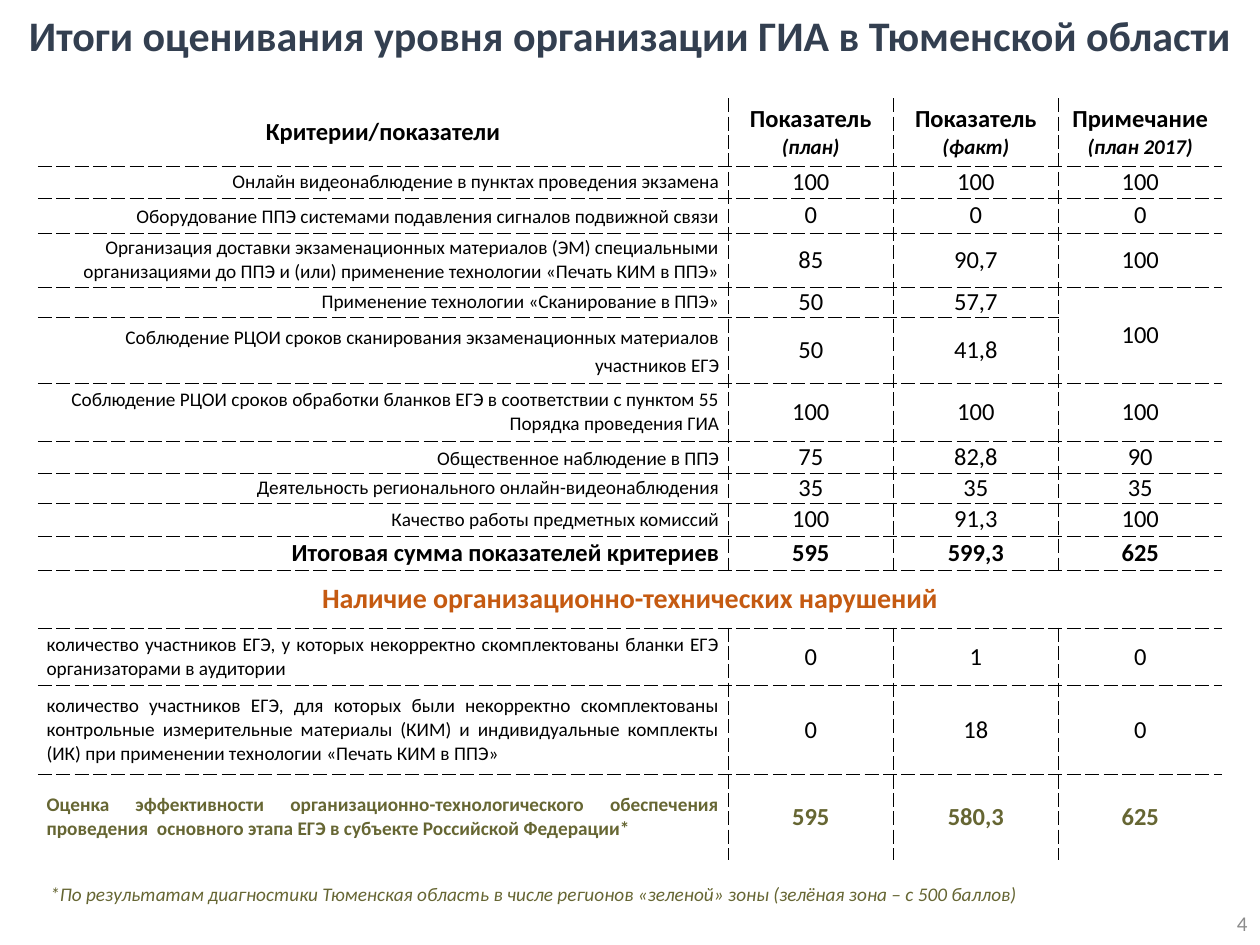
from lxml import etree
from pptx import Presentation
from pptx.dml.color import RGBColor
from pptx.enum import text as t
from pptx.oxml import ns
from pptx.util import Inches, Pt

BLACK = RGBColor(0x00, 0x00, 0x00)
SLATE = RGBColor(0x33, 0x3F, 0x50)
GRAY = RGBColor(0x8C, 0x8C, 0x8C)
ORANGE = RGBColor(0xC5, 0x5A, 0x11)
OLIVE = RGBColor(0x66, 0x66, 0x33)

LEFT, CENTER = t.PP_ALIGN.LEFT, t.PP_ALIGN.CENTER
RIGHT, JUSTIFY = t.PP_ALIGN.RIGHT, t.PP_ALIGN.JUSTIFY
GROW = t.MSO_AUTO_SIZE.SHAPE_TO_FIT_TEXT

COLUMN_WIDTHS = [5.48, 1.31, 1.31, 1.3]
ROW_HEIGHTS = [0.54, 0.25, 0.28, 0.43, 0.24, 0.52, 0.46, 0.26,
               0.23, 0.26, 0.27, 0.46, 0.46, 0.7, 0.68]
SECTION_ROW = 11
SHARED_ROWS = (4, 5)

HEADING = {"size": Pt(14), "bold": True}
SUBHEADING = {"size": Pt(12), "bold": True, "italic": True}
LABEL = {"size": Pt(11)}
VALUE = {"size": Pt(14)}
TOTAL = {"size": Pt(14), "bold": True}
SECTION = {"size": Pt(16), "bold": True, "color": ORANGE}
RATING_LABEL = {"size": Pt(11), "bold": True, "color": OLIVE}
RATING_VALUE = {"size": Pt(14), "bold": True, "color": OLIVE}

# Each header is a list of paragraphs, each paragraph a list of runs
HEADERS = [
    [[("Критерии/показатели", HEADING)]],
    [[("Показатель", HEADING)], [("(план)", SUBHEADING)]],
    [[("Показатель ", HEADING), ("(факт)", SUBHEADING)]],
    [[("Примечание ", HEADING), ("(план 2017)", SUBHEADING)]],
]

# Label, values, line spacing of the label
CRITERIA = [
    ("Онлайн видеонаблюдение в пунктах проведения экзамена",
     ["100", "100", "100"], 1.0),
    ("Оборудование ППЭ системами подавления сигналов подвижной связи",
     ["0", "0", "0"], 1.15),
    ("Организация доставки экзаменационных материалов (ЭМ) специальными "
     "организациями до ППЭ и (или) применение технологии «Печать КИМ в ППЭ»",
     ["85", "90,7", "100"], 1.0),
    ("Применение технологии «Сканирование в ППЭ»",
     ["50", "57,7", "100"], 1.0),
    ("Соблюдение РЦОИ сроков сканирования экзаменационных материалов "
     "участников ЕГЭ", ["50", "41,8"], 1.15),
    ("Соблюдение РЦОИ сроков обработки бланков ЕГЭ в соответствии с пунктом 55 "
     "Порядка проведения ГИА", ["100", "100", "100"], 1.0),
    ("Общественное наблюдение в ППЭ", ["75", "82,8", "90"], 1.15),
    ("Деятельность регионального онлайн-видеонаблюдения",
     ["35", "35", "35"], 1.0),
    ("Качество работы предметных комиссий", ["100", "91,3", "100"], 1.0),
]
SUM_ROW = ("Итоговая сумма показателей критериев", ["595", "599,3", "625"])
SECTION_TITLE = "Наличие организационно-технических нарушений"
VIOLATIONS = [
    ("количество участников ЕГЭ, у которых некорректно скомплектованы бланки "
     "ЕГЭ организаторами в аудитории", ["0", "1", "0"]),
    ("количество участников ЕГЭ, для которых были некорректно скомплектованы "
     "контрольные измерительные материалы (КИМ) и индивидуальные комплекты "
     "(ИК) при применении технологии «Печать КИМ в ППЭ»", ["0", "18", "0"]),
]
RATING_ROW = (
    "Оценка эффективности организационно-технологического обеспечения "
    "проведения  основного этапа ЕГЭ в субъекте Российской Федерации*",
    ["595", "580,3", "625"])


def write(frame, paragraphs, alignment, line_spacing=1.0):
    """Fill a text frame from paragraphs made of (text, format) runs."""
    for index, runs in enumerate(paragraphs):
        paragraph = frame.add_paragraph() if index else frame.paragraphs[0]
        paragraph.alignment = alignment
        paragraph.line_spacing = line_spacing
        for content, style in runs:
            run = paragraph.add_run()
            run.text = content
            font = {"name": "Calibri", "bold": False, "italic": False, **style}
            run.font.color.rgb = font.pop("color", BLACK)
            for name, value in font.items():
                setattr(run.font, name, value)


def add_text(slide, box, content, style, alignment, **frame_format):
    shape = slide.shapes.add_textbox(*map(Inches, box))
    shape.text_frame.word_wrap = True
    for name, value in frame_format.items():
        setattr(shape.text_frame, name, value)
    write(shape.text_frame, [[(content, style)]], alignment)


def add_title(slide, content):
    title = slide.shapes.title
    title.left, title.top, title.width, title.height = map(
        Inches, (0, 0, 10, 0.53))
    frame = title.text_frame
    frame.vertical_anchor = t.MSO_ANCHOR.TOP
    frame.auto_size = GROW
    write(frame, [[(content, {"size": Pt(24), "bold": True, "color": SLATE})]],
          CENTER, 1.07)


def set_border(cell, side, visible):
    line = etree.SubElement(cell._tc.get_or_add_tcPr(), ns.qn("a:ln" + side))
    if visible:
        line.set("w", str(Pt(0.25)))
        fill = etree.SubElement(line, ns.qn("a:solidFill"))
        etree.SubElement(fill, ns.qn("a:srgbClr"), val=str(BLACK))
        etree.SubElement(line, ns.qn("a:prstDash"), val="sysDash")
    else:
        line.set("w", "0")
        etree.SubElement(line, ns.qn("a:noFill"))


def format_cell(cell, row, column):
    """Draw dashed lines between cells only, none around the table."""
    last_row, last_column = len(ROW_HEIGHTS) - 1, len(COLUMN_WIDTHS) - 1
    in_section = row == SECTION_ROW
    under_shared = row == SHARED_ROWS[1] and column == last_column
    set_border(cell, "L", column > 0 and not in_section)
    set_border(cell, "R", column < last_column and not in_section)
    set_border(cell, "T", row > 0 and not under_shared)
    set_border(cell, "B", row < last_row)
    cell.fill.background()
    cell.vertical_anchor = t.MSO_ANCHOR.MIDDLE
    cell.margin_left = cell.margin_right = Inches(0.07)
    cell.margin_top = cell.margin_bottom = 0


def fill_row(table, row, label, values, label_style, value_style, alignment,
             line_spacing=1.0):
    write(table.cell(row, 0).text_frame, [[(label, label_style)]], alignment,
          line_spacing)
    for column, value in enumerate(values, 1):
        write(table.cell(row, column).text_frame, [[(value, value_style)]],
              CENTER)


def add_results_table(slide):
    table = slide.shapes.add_table(
        len(ROW_HEIGHTS), len(COLUMN_WIDTHS), Inches(0.3), Inches(0.78),
        Inches(sum(COLUMN_WIDTHS)), Inches(sum(ROW_HEIGHTS))).table
    table.first_row = table.horz_banding = False
    for column, width in zip(table.columns, COLUMN_WIDTHS):
        column.width = Inches(width)
    for index, height in enumerate(ROW_HEIGHTS):
        table.rows[index].height = Inches(height)
        for column in range(len(COLUMN_WIDTHS)):
            format_cell(table.cell(index, column), index, column)
    table.cell(SHARED_ROWS[0], 3).merge(table.cell(SHARED_ROWS[1], 3))
    table.cell(SECTION_ROW, 0).merge(table.cell(SECTION_ROW, 3))

    for column, paragraphs in enumerate(HEADERS):
        write(table.cell(0, column).text_frame, paragraphs, CENTER)
    for row, (label, values, spacing) in enumerate(CRITERIA, 1):
        fill_row(table, row, label, values, LABEL, VALUE, RIGHT, spacing)
    fill_row(table, SECTION_ROW - 1, *SUM_ROW, TOTAL, TOTAL, RIGHT)
    fill_row(table, SECTION_ROW, SECTION_TITLE, [], SECTION, VALUE, CENTER)
    for row, (label, values) in enumerate(VIOLATIONS, SECTION_ROW + 1):
        fill_row(table, row, label, values, LABEL, VALUE, JUSTIFY)
    fill_row(table, len(ROW_HEIGHTS) - 1, *RATING_ROW, RATING_LABEL,
             RATING_VALUE, JUSTIFY)


def main():
    presentation = Presentation()
    presentation.slide_width, presentation.slide_height = Inches(10), Inches(7.5)
    slide = presentation.slides.add_slide(presentation.slide_layouts[5])
    add_title(slide, "Итоги оценивания уровня организации ГИА в Тюменской области")
    add_text(slide, (7.75, 7.13, 2.25, 0.4), "4",
             {"size": Pt(12), "color": GRAY}, RIGHT,
             vertical_anchor=t.MSO_ANCHOR.MIDDLE)
    add_results_table(slide)
    add_text(slide, (0.3, 6.95, 8.08, 0.29),
             "*По результатам диагностики Тюменская область в числе регионов "
             "«зеленой» зоны (зелёная зона – с 500 баллов)",
             {"size": Pt(11), "italic": True, "color": OLIVE}, LEFT,
             auto_size=GROW)
    presentation.save("out.pptx")


if __name__ == "__main__":
    main()
